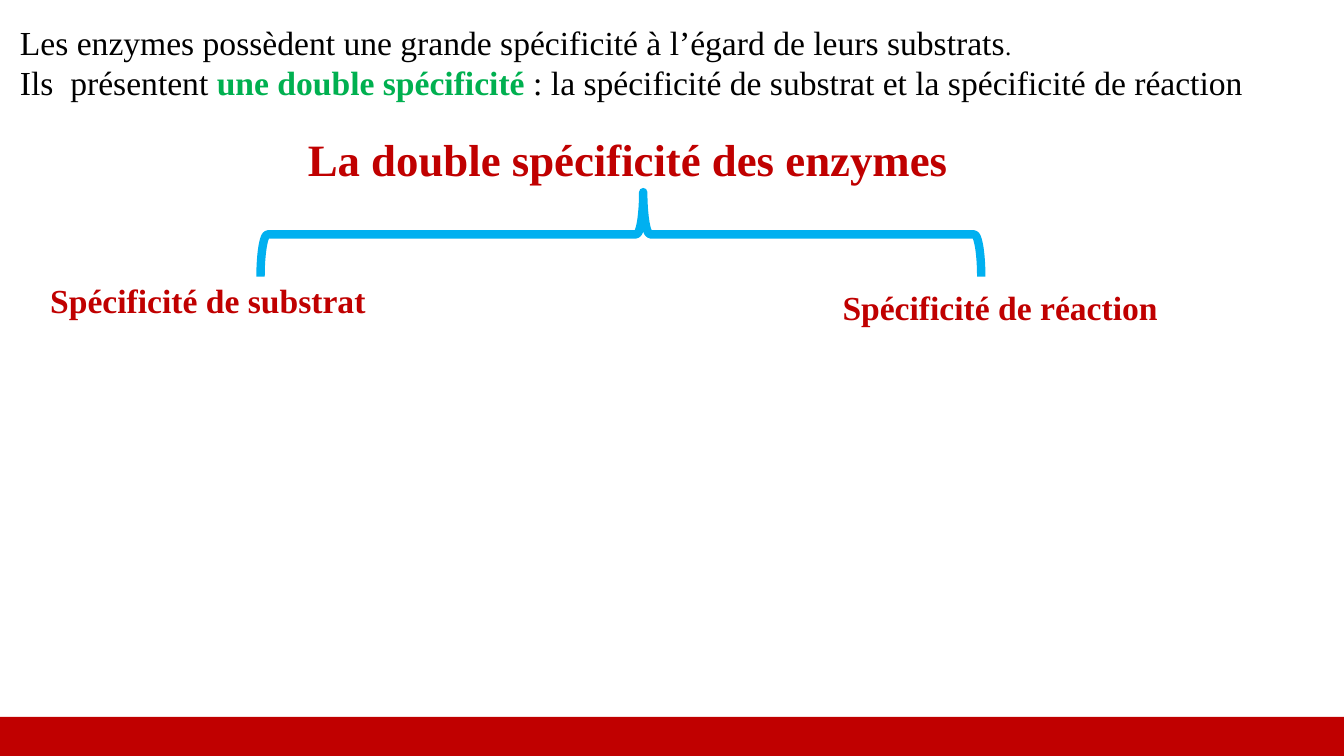
import pptx
import pptx.util
import pptx.dml.color
import pptx.enum.shapes
import pptx.enum.text

Pt = pptx.util.Pt
SHAPES = pptx.enum.shapes.MSO_SHAPE
RED, GREEN, BLUE, BLACK = "C00000", "00B050", "00B0F0", "000000"


def color(value):
    return pptx.dml.color.RGBColor.from_string(value)


class Deck:
    font = "Times New Roman"

    def __init__(self, width, height):
        self.prs = pptx.Presentation()
        self.prs.slide_width, self.prs.slide_height = Pt(width), Pt(height)

    def add_slide(self):
        self.s = self.prs.slides.add_slide(self.prs.slide_layouts[5])

    def fill_text(self, sp, paragraphs, align):
        """Each paragraph is a list of runs: (text, size, colour, bold)."""
        tf = sp.text_frame
        tf.word_wrap = True
        tf.auto_size = pptx.enum.text.MSO_AUTO_SIZE.NONE
        tf.vertical_anchor = pptx.enum.text.MSO_ANCHOR.TOP
        for i, runs in enumerate(paragraphs):
            p = tf.add_paragraph() if i else tf.paragraphs[0]
            p.alignment = align
            for text, size, fill, bold in runs:
                r = p.add_run()
                r.text = text
                r.font.name, r.font.size, r.font.bold = self.font, Pt(size), bold
                r.font.color.rgb = color(fill)

    def title(self, x, y, w, h, *paragraphs):
        sp = self.s.shapes.title
        sp.left, sp.top, sp.width, sp.height = Pt(x), Pt(y), Pt(w), Pt(h)
        self.fill_text(sp, paragraphs, pptx.enum.text.PP_ALIGN.CENTER)

    def text(self, x, y, w, h, *paragraphs):
        sp = self.s.shapes.add_textbox(Pt(x), Pt(y), Pt(w), Pt(h))
        self.fill_text(sp, paragraphs, pptx.enum.text.PP_ALIGN.LEFT)

    def shape(self, kind, x, y, w, h):
        sp = self.s.shapes.add_shape(kind, Pt(x), Pt(y), Pt(w), Pt(h))
        sp.shadow.inherit = False
        return sp

    def bar(self, x, y, w, h, fill):
        sp = self.shape(SHAPES.RECTANGLE, x, y, w, h)
        sp.fill.solid()
        sp.fill.fore_color.rgb = color(fill)
        sp.line.fill.background()

    def brace(self, x, y, w, h, line, weight):
        """Brace pointing up, placed by the frame it covers once turned."""
        sp = self.shape(SHAPES.RIGHT_BRACE, x + (w - h) / 2, y + (h - w) / 2, h, w)
        sp.rotation = 270
        sp.adjustments[0], sp.adjustments[1] = 0.083, 0.531
        sp.fill.background()
        sp.line.color.rgb = color(line)
        sp.line.width = Pt(weight)


def main():
    deck = Deck(960, 540)
    deck.add_slide()

    # Footer band
    deck.bar(0, 512, 960, 28, RED)

    # Title
    deck.title(203.8, 90.7, 497.5, 46,
               [("La double spécificité des enzymes ", 32, RED, True)])

    # Introduction
    deck.text(7.2, 12.2, 892, 65.5,
              [("Les enzymes possèdent une grande spécificité à l’égard de leurs substrats",
                24, BLACK, False),
               (".", 18, BLACK, False)],
              [("Ils  présentent ", 24, BLACK, False),
               ("une double spécificité ", 24, GREEN, True),
               (": la spécificité de substrat et la spécificité de réaction",
                24, BLACK, False)])

    # Brace and its two branches
    deck.brace(186.1, 137.2, 514.8, 60.4, BLUE, 6)
    for label, x, y in (("Spécificité de substrat", 28.8, 196.6),
                        ("Spécificité de réaction", 594.7, 201.6)):
        deck.text(x, y, 337, 36, [(label, 24, RED, True)])

    deck.prs.save("out.pptx")


if __name__ == "__main__":
    main()
